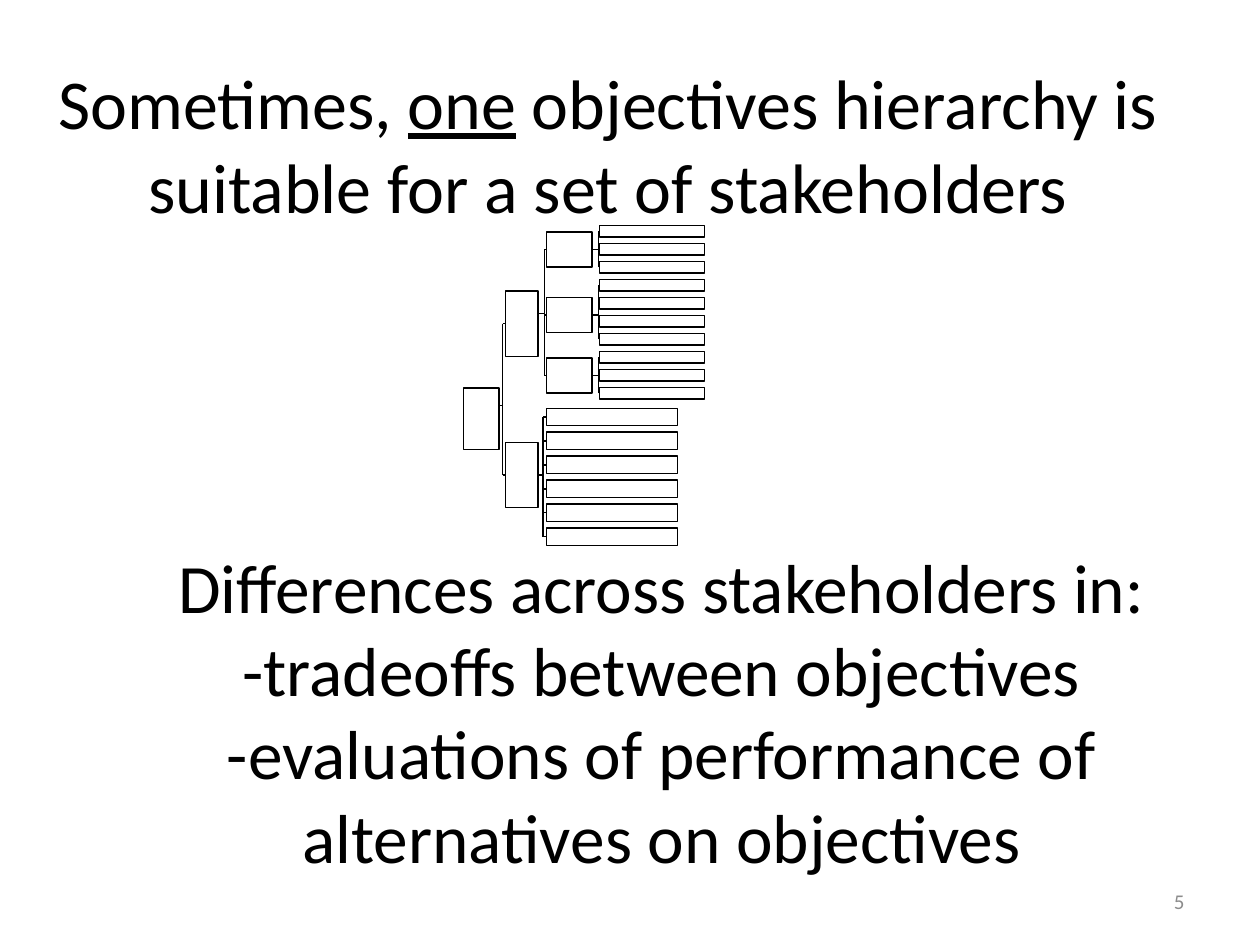
from lxml import etree
from pptx import Presentation
from pptx import util as u
from pptx.dml.color import RGBColor
from pptx.enum import shapes, text
from pptx.oxml.ns import qn

# Content
HEADLINE = [("Sometimes, ", False), ("one", True),
            (" objectives hierarchy is suitable for a set of stakeholders", False)]
DIFFERENCES = ["Differences across stakeholders in:",
               "-tradeoffs between objectives",
               "-evaluations of performance of alternatives on objectives"]
PAGE = "5"
COLORS = {"ink": "000000", "paper": "FFFFFF", "page": "8C8C8C"}
FONT = "Calibri"

# Hierarchy boxes: left, top, width, height in inches
ROOT = (3.68, 3.08, 0.28, 0.49)
UPPER = (4.01, 2.31, 0.26, 0.52)
LOWER = (4.01, 3.51, 0.26, 0.52)
GROUP_TOPS, GROUP_SIZE = [1.84, 2.36, 2.84], (0.36, 0.28)
GROUP_LEAVES = [3, 4, 3]
GROUP_LEFT = 4.34
LEAF_LEFT, LEAF_TOP, LEAF_STEP, LEAF_SIZE = 4.76, 1.79, 0.143, (0.83, 0.09)
LOWER_COUNT, LOWER_TOP, LOWER_STEP, LOWER_SIZE = 6, 3.24, 0.19, (1.04, 0.14)

prs = Presentation()
prs.slide_width, prs.slide_height = u.Inches(10), u.Inches(7.5)
slide = prs.slides.add_slide(prs.slide_layouts[5])


def color(name):
    return RGBColor.from_string(COLORS[name])


def add_run(paragraph, words, size, name="ink", underline=None):
    run = paragraph.add_run()
    run.text = words
    run.font.size, run.font.name = u.Pt(size), FONT
    run.font.color.rgb = color(name)
    run.font.underline = underline


def add_textbox(left, top, width, height, align):
    frame = slide.shapes.add_textbox(*map(u.Inches, (left, top, width, height))).text_frame
    frame.word_wrap = True
    frame.paragraphs[0].alignment = align
    return frame


# Differences between stakeholders
title = slide.shapes.title
title.left, title.top, title.width, title.height = map(u.Inches, (0.75, 4.3, 9, 2.68))
title.text_frame.vertical_anchor = text.MSO_ANCHOR.MIDDLE
title.text_frame.auto_size = text.MSO_AUTO_SIZE.NONE
for i, line in enumerate(DIFFERENCES):
    para = title.text_frame.paragraphs[0] if i == 0 else title.text_frame.add_paragraph()
    para.alignment = text.PP_ALIGN.CENTER
    para.space_before = u.Pt(0)
    add_run(para, line, 39.6)

# Page number
page = add_textbox(7.17, 6.95, 2.33, 0.4, text.PP_ALIGN.RIGHT)
page.vertical_anchor = text.MSO_ANCHOR.MIDDLE
add_run(page.paragraphs[0], PAGE, 12, "page")

# Objectives hierarchy
tree = slide.shapes.add_group_shape().shapes


def add_box(left, top, width, height):
    box = tree.add_shape(shapes.MSO_SHAPE.RECTANGLE,
                         *map(u.Inches, (left, top, width, height)))
    box.shadow.inherit = False
    box.fill.solid()
    box.fill.fore_color.rgb = color("paper")
    box.line.color.rgb = color("ink")
    box.line.width = u.Pt(0.75)
    return box


def add_column(count, left, top, step, size):
    return [add_box(left, top + step * i, *size) for i in range(count)]


def middle(box):
    return box.top + box.height // 2


def add_line(x1, y1, x2, y2):
    line = tree.add_connector(shapes.MSO_CONNECTOR.STRAIGHT, x1, y1, x2, y2)
    line.line.color.rgb = color("ink")
    line.line.width = u.Pt(0.75)
    etree.SubElement(line._element.spPr, qn("a:effectLst"))
    return line


def add_bracket(parent, children, spine, stub=None):
    """Stub from the parent, a spine, and a tick to each child."""
    x = u.Inches(spine)
    y = middle(parent) if stub is None else u.Inches(stub)
    add_line(x, middle(children[0]), x, middle(children[-1]))
    stub_line = add_line(parent.left + parent.width, y, x, y)
    if stub is None:
        stub_line.begin_connect(parent, 3)
    for child in children:
        add_line(x, middle(child), child.left, middle(child)).end_connect(child, 1)


leaves = add_column(sum(GROUP_LEAVES), LEAF_LEFT, LEAF_TOP, LEAF_STEP, LEAF_SIZE)
groups = [add_box(GROUP_LEFT, top, *GROUP_SIZE) for top in GROUP_TOPS]
lower_leaves = add_column(LOWER_COUNT, GROUP_LEFT, LOWER_TOP, LOWER_STEP, LOWER_SIZE)
upper, lower, root = add_box(*UPPER), add_box(*LOWER), add_box(*ROOT)

first = 0
for group, count in zip(groups, GROUP_LEAVES):
    add_bracket(group, leaves[first:first + count], 4.75)
    first += count
add_bracket(upper, groups, 4.32, stub=2.49)
add_bracket(lower, lower_leaves, 4.31)
add_bracket(root, [upper, lower], 3.99, stub=3.22)

# Headline
headline = add_textbox(0.2, 0.42, 9.25, 1.45, text.PP_ALIGN.CENTER)
for words, underlined in HEADLINE:
    add_run(headline.paragraphs[0], words, 40, underline=underlined)

prs.save("out.pptx")
